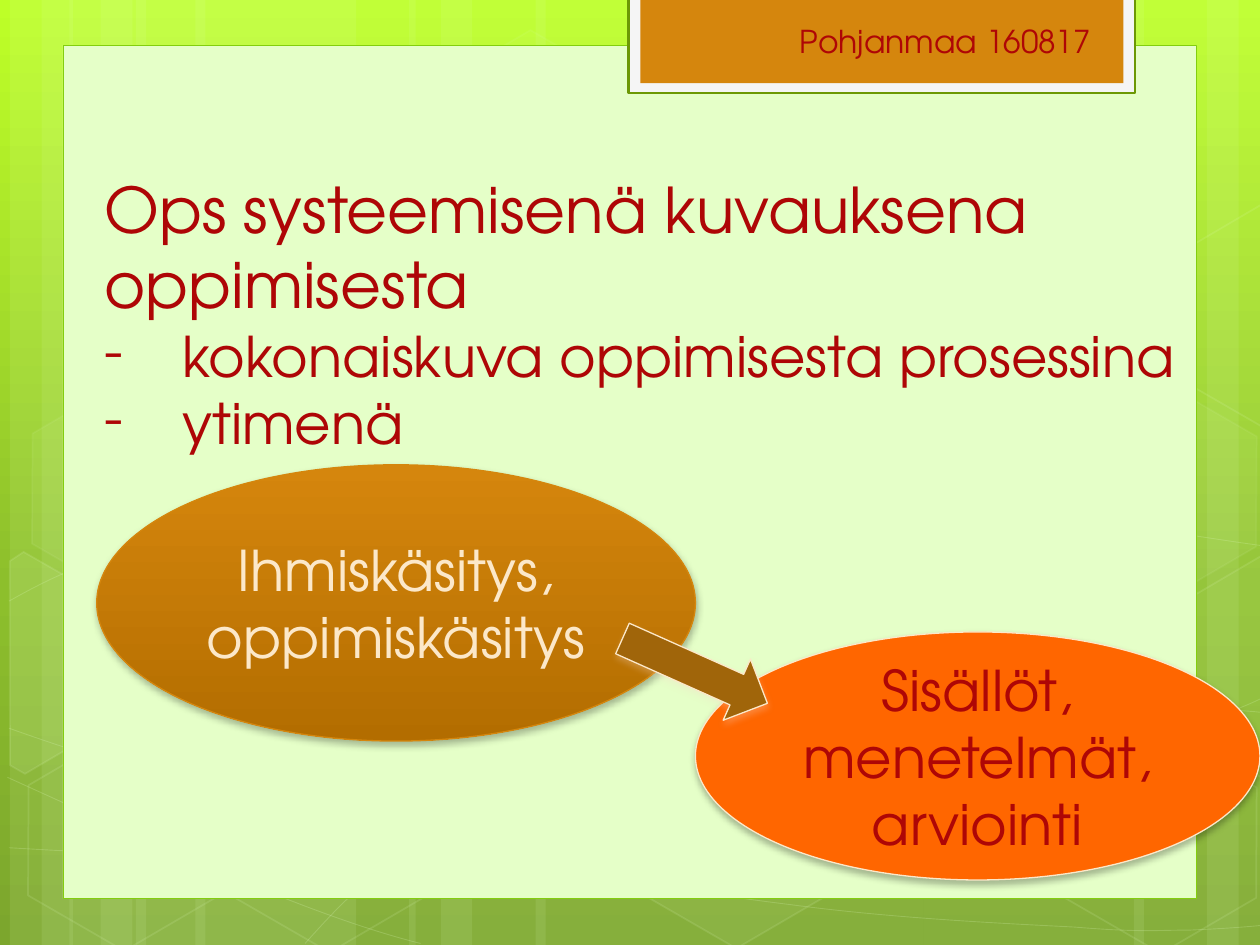
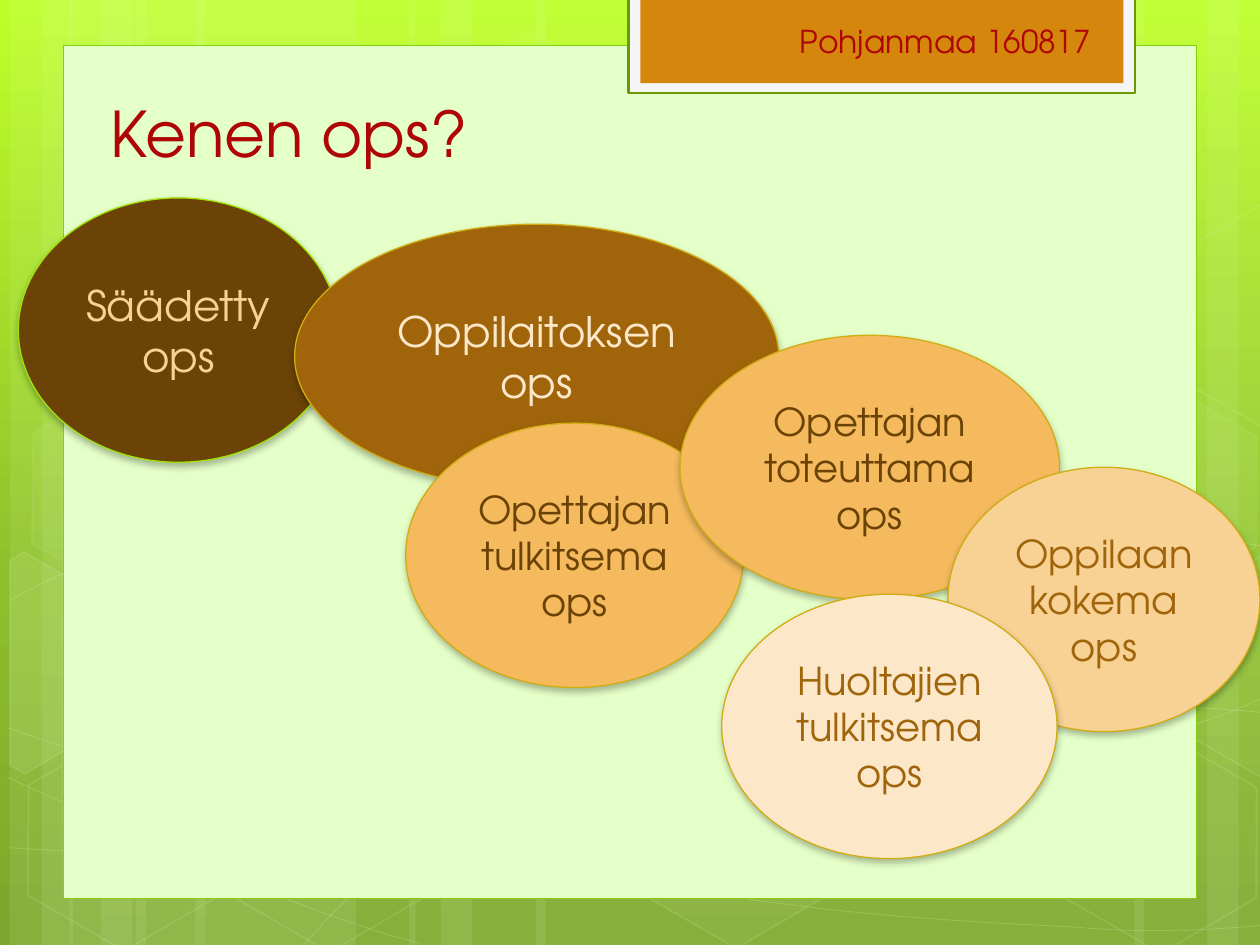
"""Build two slides on curriculum as a system and whose curriculum it is."""
from lxml.etree import SubElement
from pptx import Presentation
from pptx.dml.color import RGBColor
from pptx.enum.shapes import MSO_SHAPE as Preset
from pptx.enum.text import MSO_ANCHOR as Anchor, MSO_AUTO_SIZE as AutoSize, PP_ALIGN as Align
from pptx.oxml.ns import qn
from pptx.util import Cm, Pt

FONT = "TeX Gyre Adventor"
BLACK = RGBColor(0x00, 0x00, 0x00)
MINT = RGBColor(0xE5, 0xFF, 0xC8)
LIME = RGBColor(0xBE, 0xFF, 0x27)
LEAF = RGBColor(0x8D, 0xBF, 0x2C)
MOSS = RGBColor(0x7C, 0xA6, 0x2D)
PANEL_EDGE = RGBColor(0x83, 0xCE, 0x0E)
TAG_EDGE = RGBColor(0x6C, 0x98, 0x05)
BRIGHT_EDGE = RGBColor(0xA2, 0xE4, 0x07)
GOLD_EDGE = RGBColor(0xD1, 0xAC, 0x13)
OFF_WHITE = RGBColor(0xF5, 0xF5, 0xF5)
OCHRE = RGBColor(0xD5, 0x86, 0x0D)
DARK_OCHRE = RGBColor(0xB3, 0x6D, 0x00)
ORANGE = RGBColor(0xFF, 0x66, 0x00)
RED = RGBColor(0xAE, 0x06, 0x06)
DARK_BROWN = RGBColor(0x6B, 0x43, 0x06)
BROWN = RGBColor(0xA0, 0x65, 0x0A)
AMBER = RGBColor(0xF5, 0xBA, 0x5E)
SAND = RGBColor(0xF8, 0xD1, 0x94)
CREAM = RGBColor(0xFC, 0xE8, 0xC9)
PEACH = RGBColor(0xF8, 0xD7, 0xC7)

SLIDE_WIDTH, SLIDE_HEIGHT = 25.4, 19.05
HEXAGON_SIZE = (4.44, 3.86)
HEXAGON_TURN = 30
OVAL_HEIGHT = 5.33

STRIPES = [
    (2.74, 4.44), (0.2, 1.27), (0.84, 2.11), (3.94, 4.44), (1.4, 1.27), (2.03, 2.11),
    (18.62, 4.44), (24.33, 1.27), (22.86, 2.11), (10.8, 7.82), (8.25, 1.27), (8.89, 2.11),
]
CURVES = [
    [(0.18, 17.09), (1.55, 17.17), (2.92, 17.25), (4.83, 17.22), (6.73, 17.2),
     (9.09, 17.15), (11.63, 16.89), (14.17, 16.64), (17.78, 16.15), (20.12, 15.67),
     (22.43, 15.19), (24.82, 14.43), (25.58, 14)],
    [(0.18, 12.12), (0.91, 11.71), (1.65, 11.33), (3.07, 10.95), (4.52, 10.57),
     (6.58, 10.01), (8.81, 9.83), (11.07, 9.65), (13.82, 9.63), (16.61, 9.83),
     (19.41, 10.03), (24.05, 10.82), (25.58, 11.02)],
    [(0.15, 15.67), (3.23, 17.07), (6.27, 18.47), (8.48, 19.02)],
    [(0.18, 14.68), (0.97, 14.96), (1.78, 15.24), (3.25, 15.65), (4.72, 16.03),
     (6.93, 16.66), (9.07, 17.09), (11.18, 17.53), (13.84, 17.98), (15.95, 18.24),
     (18.06, 18.52), (20.32, 18.62), (21.67, 18.69), (22.99, 18.8), (23.34, 18.75),
     (24, 18.75), (24.66, 18.72), (25.12, 18.69), (25.58, 18.64)],
    [(6.15, 19.02), (6.6, 18.52), (7.06, 18.01), (7.67, 17.55), (8.28, 17.09),
     (9.14, 16.59), (9.86, 16.23), (10.57, 15.88), (11, 15.72), (11.94, 15.47),
     (12.85, 15.21), (14.55, 14.86), (15.44, 14.68), (16.36, 14.5), (16.48, 14.5),
     (17.27, 14.45), (18.06, 14.38), (19.3, 14.3), (20.17, 14.27), (21.06, 14.25),
     (22.5, 14.27), (22.5, 14.27), (22.5, 14.27), (24.21, 14.27), (24.21, 14.27),
     (24.66, 14.3), (25.1, 14.33), (25.32, 14.35), (25.55, 14.38), (25.48, 14.35),
     (25.55, 14.38)],
]
HEXAGONS = [
    (8.48, 0.91, 4, 8), (12.62, 14.96, 6, 12), (0.28, 15.01, 0, 12), (0.36, 7.92, 7, 8),
    (4.42, 15.04, 0, 12), (19.13, 11.51, 10, 12), (21.18, 15.06, 0, 12), (21.18, 7.98, 7, 8),
]
LEFT_CUT = [(-0.85, 11.97), (-0.7, 11.67), (1.56, 11.66), (2.65, 13.61), (1.56, 15.53),
            (1.21, 15.53)]
RIGHT_CUT = [(23.28, 13.19), (24.37, 11.27), (24.61, 11.28), (26.73, 14.95), (26.63, 15.13),
             (24.4, 15.13)]
UPPER_CUT = [(x, y - 7.08) for x, y in RIGHT_CUT]

OPS_OVALS = [
    (0.37, 3.99, 6.45, "Säädetty ops", DARK_BROWN, BRIGHT_EDGE, 24, SAND),
    (5.94, 4.52, 9.76, "Oppilaitoksen ops", BROWN, GOLD_EDGE, 24, CREAM),
    (8.18, 8.53, 6.81, "Opettajan tulkitsema ops", AMBER, GOLD_EDGE, 22, DARK_BROWN),
    (13.71, 6.76, 7.65, "Opettajan toteuttama ops", AMBER, GOLD_EDGE, 22, DARK_BROWN),
    (19.11, 9.42, 6.29, "Oppilaan kokema ops", SAND, GOLD_EDGE, 22, BROWN),
    (14.55, 11.98, 6.76, "Huoltajien tulkitsema ops", CREAM, GOLD_EDGE, 22, BROWN),
]


def set_format(target, values):
    """Set each named attribute of the target."""
    for name, value in values.items():
        setattr(target, name, value)


def place(shape, bounds):
    """Move and size a shape to bounds in centimetres."""
    set_format(shape, dict(zip(("left", "top", "width", "height"), map(Cm, bounds))))


def set_gradient(fill, holder, stops):
    """Fill from top to bottom with (percent, colour) stops."""
    fill.gradient()
    fill.gradient_angle = 270
    stop_list = holder.find(".//" + qn("a:gsLst"))
    for stop in list(stop_list):
        stop_list.remove(stop)
    for percent, colour in stops:
        stop = SubElement(stop_list, qn("a:gs"), pos=str(percent * 1000))
        SubElement(stop, qn("a:srgbClr"), val=str(colour))


def set_alpha(holder, percent):
    """Make the solid colour directly inside the holder translucent."""
    colour = holder.find(qn("a:solidFill") + "/" + qn("a:srgbClr"))
    SubElement(colour, qn("a:alpha"), val=str(percent * 1000))


def paint(shape, fill=None, edge=None, weight=0.75, fill_alpha=100, edge_alpha=100):
    """Give a shape its fill, its outline and no shadow."""
    shape.shadow.inherit = False
    properties = shape.element.spPr
    if fill is None:
        shape.fill.background()
    else:
        shape.fill.solid()
        shape.fill.fore_color.rgb = fill
        if fill_alpha < 100:
            set_alpha(properties, fill_alpha)
    if edge is None:
        shape.line.fill.background()
    else:
        shape.line.color.rgb = edge
        shape.line.width = Pt(weight)
        if edge_alpha < 100:
            set_alpha(properties.find(qn("a:ln")), edge_alpha)


def add_shadow(shape, colour=BLACK):
    """Drop a soft shadow straight below a painted shape."""
    effects = shape.element.spPr.find(qn("a:effectLst"))
    shadow = SubElement(effects, qn("a:outerShdw"), blurRad=str(Pt(4)), dist=str(Pt(2)),
                        dir="5400000", rotWithShape="0")
    tint = SubElement(shadow, qn("a:srgbClr"), val=str(colour))
    SubElement(tint, qn("a:alpha"), val="28000")


def add_preset(page, preset, bounds, **look):
    """Add a painted preset shape."""
    shape = page.shapes.add_shape(preset, *map(Cm, bounds))
    paint(shape, **look)
    return shape


def add_outline(page, points, close, **look):
    """Add a painted freeform through points in centimetres."""
    start, *others = [(Cm(x), Cm(y)) for x, y in points]
    builder = page.shapes.build_freeform(*start)
    builder.add_line_segments(others, close=close)
    outline = builder.convert_to_shape()
    paint(outline, **look)
    return outline


def bend(outline):
    """Turn every three straight segments of an outline into one cubic curve."""
    segments = list(outline.element.iter(qn("a:lnTo")))
    track = segments[0].getparent()
    for first in range(0, len(segments), 3):
        curve = SubElement(track, qn("a:cubicBezTo"))
        for segment in segments[first:first + 3]:
            curve.append(segment[0])
            track.remove(segment)


def write(para, text, size, colour, align):
    """Write one run of text into a paragraph."""
    para.alignment = align
    span = para.add_run()
    span.text = text
    set_format(span.font, {"name": FONT, "size": Pt(size)})
    span.font.color.rgb = colour


def add_dash(para):
    """Give a paragraph a hanging dash bullet."""
    properties = para._p.get_or_add_pPr()
    properties.set("marL", str(Cm(1.57)))
    properties.set("indent", str(Cm(-1.57)))
    SubElement(properties, qn("a:buFont"), typeface=FONT)
    SubElement(properties, qn("a:buChar"), char="-")


def add_title(page, bounds, title, points=()):
    """Bring the title to the front and write it with its dashed points."""
    box = page.shapes.title
    box.element.getparent().append(box.element)
    place(box, bounds)
    frame = box.text_frame
    set_format(frame, {"word_wrap": True, "auto_size": AutoSize.NONE,
                       "vertical_anchor": Anchor.TOP})
    write(frame.paragraphs[0], title, 36, RED, Align.LEFT)
    for point in points:
        para = frame.add_paragraph()
        add_dash(para)
        write(para, point, 32, RED, Align.LEFT)


def add_oval(page, bounds, text, fill, edge, size, colour):
    """Add a shadowed oval with centred text."""
    oval = add_preset(page, Preset.OVAL, bounds, fill=fill, edge=edge)
    add_shadow(oval)
    write(oval.text_frame.paragraphs[0], text, size, colour, Align.CENTER)
    return oval


def add_backdrop(page):
    """Draw the green pattern, the panel and the empty tag."""
    set_gradient(page.background.fill, page.element, [(0, LIME), (62, LEAF), (100, MOSS)])
    for left, width in STRIPES:
        add_preset(page, Preset.RECTANGLE, (left, 0, width, SLIDE_HEIGHT),
                   fill=MINT, fill_alpha=10)
    for knots in CURVES:
        bend(add_outline(page, knots, False, edge=MINT, weight=0.5, edge_alpha=20))
    for left, top, fill_alpha, edge_alpha in HEXAGONS:
        hexagon = add_preset(page, Preset.HEXAGON, (left, top, *HEXAGON_SIZE),
                             fill=MINT if fill_alpha else None, fill_alpha=fill_alpha,
                             edge=MINT, weight=1, edge_alpha=edge_alpha)
        hexagon.rotation = HEXAGON_TURN
        hexagon.adjustments[0] = 0.285
    for corners, fill_alpha in ((LEFT_CUT, 10), (RIGHT_CUT, 4), (UPPER_CUT, 0)):
        cut = add_outline(page, corners, True, fill=MINT if fill_alpha else None,
                          fill_alpha=fill_alpha, edge=MINT, weight=1, edge_alpha=12)
        cut.rotation = HEXAGON_TURN
    add_preset(page, Preset.RECTANGLE, (1.27, 0.91, 22.86, 17.2),
               fill=MINT, edge=PANEL_EDGE, weight=0.5)
    add_preset(page, Preset.RECTANGLE, (12.67, -0.05, 10.21, 1.93),
               fill=OFF_WHITE, edge=TAG_EDGE, weight=1.25)
    add_preset(page, Preset.RECTANGLE, (12.91, -0.05, 9.74, 1.73), fill=OCHRE)


def add_tag_text(page):
    """Write the place and date on the tag."""
    box = page.shapes.add_textbox(*map(Cm, (13.05, 0.32, 9.37, 1.02)))
    box.text_frame.word_wrap = True
    write(box.text_frame.paragraphs[0], "Pohjanmaa 160817 ", 18, RED, Align.RIGHT)


def add_page(deck):
    """Add a title-only slide with the shared backdrop."""
    page = deck.slides.add_slide(deck.slide_layouts[5])
    add_backdrop(page)
    return page


def build_system_page(deck):
    """Build the slide on the curriculum as a systemic description."""
    page = add_page(deck)
    add_title(page, (1.85, 3.3, 22.4, 6.07), "Ops systeemisenä kuvauksena oppimisesta",
              ["kokonaiskuva oppimisesta prosessina", "ytimenä"])
    core = add_oval(page, (1.95, 9.37, 12.07, 5.57), "Ihmiskäsitys, oppimiskäsitys",
                    OCHRE, OCHRE, 32, CREAM)
    set_gradient(core.fill, core.element, [(0, OCHRE), (100, DARK_OCHRE)])
    add_oval(page, (14.02, 12.74, 11.38, 5), "Sisällöt, menetelmät, arviointi",
             ORANGE, CREAM, 32, RED)
    add_tag_text(page)
    arrow = add_preset(page, Preset.RIGHT_ARROW, (12.41, 12.85, 3.2, 1.35),
                       fill=BROWN, edge=CREAM)
    arrow.rotation = 24.1
    add_shadow(arrow, PEACH)


def build_owner_page(deck):
    """Build the slide on whose curriculum it is."""
    page = add_page(deck)
    add_title(page, (1.98, 1.78, 8.28, 3.33), "Kenen ops?")
    for left, top, width, *look in OPS_OVALS:
        add_oval(page, (left, top, width, OVAL_HEIGHT), *look)
    add_tag_text(page)


def main():
    """Build and save the deck."""
    deck = Presentation()
    set_format(deck, {"slide_width": Cm(SLIDE_WIDTH), "slide_height": Cm(SLIDE_HEIGHT)})
    build_system_page(deck)
    build_owner_page(deck)
    deck.save("out.pptx")


if __name__ == "__main__":
    main()
